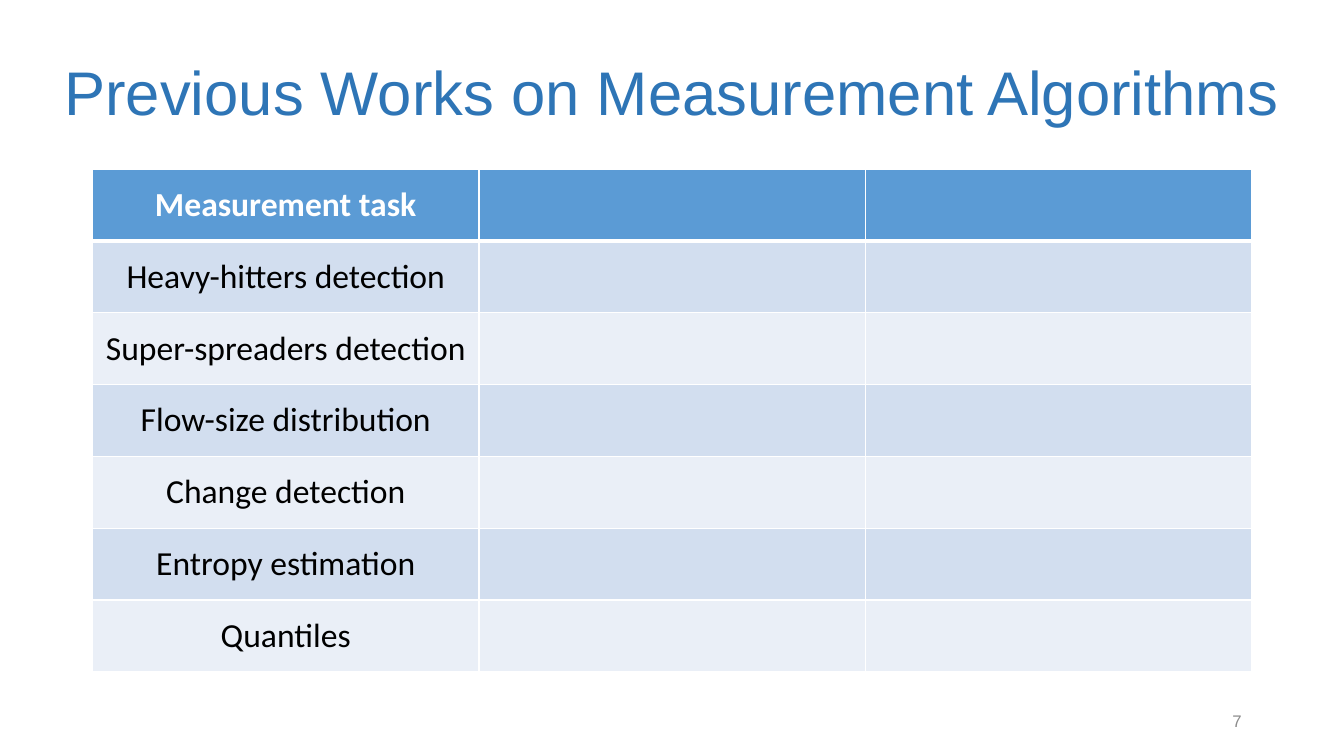
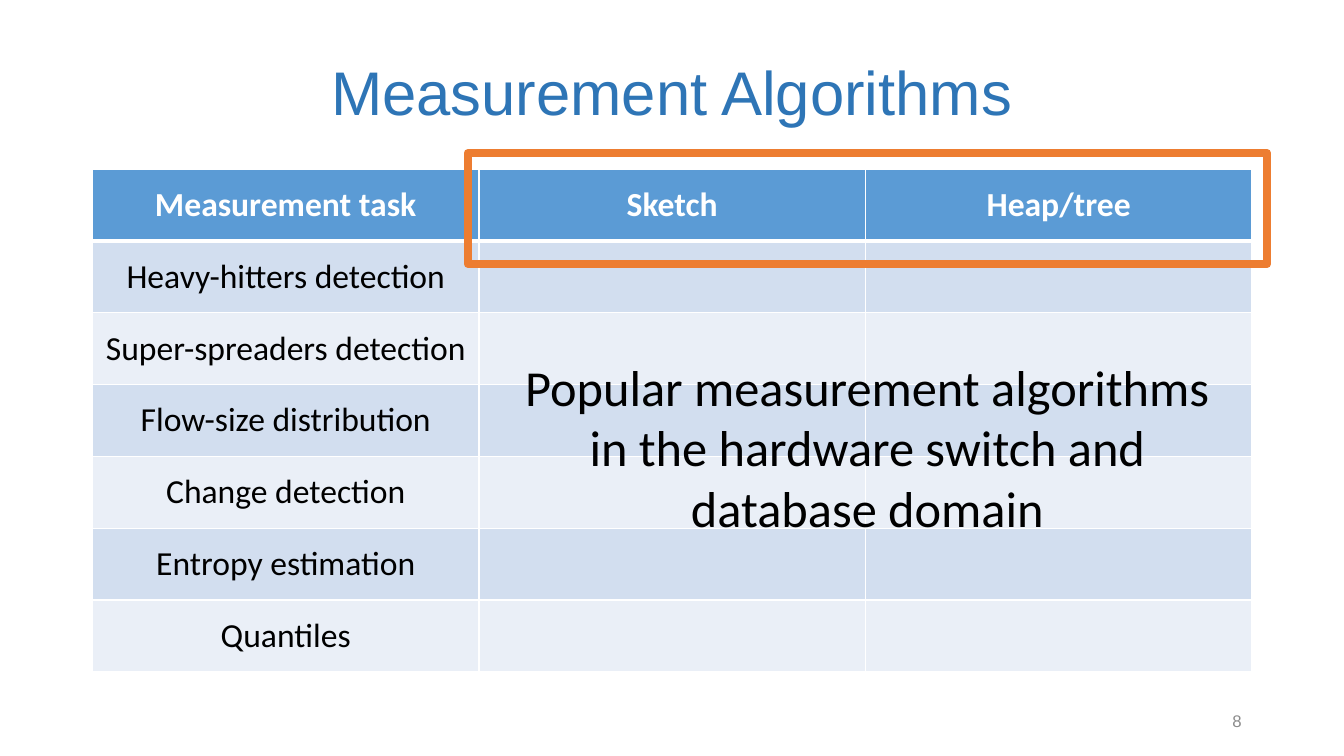
import lxml.etree
import pptx
import pptx.dml.color
import pptx.enum.shapes
import pptx.enum.text
import pptx.oxml.ns
import pptx.util

Cm = pptx.util.Cm
Pt = pptx.util.Pt
RGBColor = pptx.dml.color.RGBColor
Align = pptx.enum.text.PP_ALIGN
Anchor = pptx.enum.text.MSO_ANCHOR
qn = pptx.oxml.ns.qn

# Colours
WHITE = RGBColor(0xFF, 0xFF, 0xFF)
BLACK = RGBColor(0x00, 0x00, 0x00)
NAVY = RGBColor(0x2E, 0x75, 0xB6)
BLUE = RGBColor(0x5B, 0x9B, 0xD5)
BANDS = (RGBColor(0xEA, 0xEF, 0xF7), RGBColor(0xD2, 0xDE, 0xEF))
GREY = RGBColor(0x8C, 0x8C, 0x8C)
ORANGE = RGBColor(0xED, 0x7D, 0x31)

# Page and table grid, in centimetres
WIDE, HIGH = 33.87, 19.05
LEFT, TOP = 2.33, 4.26
COL, ROW = 9.74, 1.81

TASKS = (
    "Heavy-hitters detection",
    "Super-spreaders detection",
    "Flow-size distribution",
    "Change detection",
    "Entropy estimation",
    "Quantiles",
)


def write(frame, text, size=24, font="Calibri", color=BLACK, bold=False,
          align=Align.CENTER, anchor=Anchor.MIDDLE, lead=None):
    """Put one formatted paragraph into a text frame."""
    frame.word_wrap = True
    frame.vertical_anchor = anchor
    para = frame.paragraphs[0]
    para.alignment = align
    if lead:
        para.line_spacing = lead
    run = para.add_run()
    run.text = text
    run.font.size = Pt(size)
    run.font.name = font
    run.font.bold = bold
    run.font.color.rgb = color


def edge(cell, **widths):
    """Draw white cell borders; widths are points by side L, R, T, B."""
    props = cell._tc.get_or_add_tcPr()
    for side, width in widths.items():
        line = lxml.etree.SubElement(props, qn("a:ln" + side), w=str(Pt(width)))
        fill = lxml.etree.SubElement(line, qn("a:solidFill"))
        lxml.etree.SubElement(fill, qn("a:srgbClr"), val=str(WHITE))


class Deck:
    """Holds the shared style and the current slide."""

    def __init__(self):
        self.show = pptx.Presentation()
        self.show.slide_width = Cm(WIDE)
        self.show.slide_height = Cm(HIGH)
        self.slide = None

    def start(self, title, number, left=LEFT):
        """Add a slide with its title and page number."""
        self.slide = self.show.slides.add_slide(self.show.slide_layouts[5])
        head = self.slide.shapes.title
        head.left, head.top = Cm(left), Cm(0.58)
        head.width, head.height = Cm(WIDE - 2 * left), Cm(3.68)
        frame = head.text_frame
        frame.auto_size = pptx.enum.text.MSO_AUTO_SIZE.NONE
        write(frame, title, size=44, font="Arial", color=NAVY, lead=0.9)
        self.text(str(number), 23.92, 17.65, 7.62, 1.02, size=12,
                  font="Arial", color=GREY, align=Align.RIGHT)

    def text(self, text, left, top, width, height, **style):
        box = self.slide.shapes.add_textbox(
            Cm(left), Cm(top), Cm(width), Cm(height))
        write(box.text_frame, text, **style)

    def table(self, heads):
        """Add the task table; rows below the header are banded."""
        rows = [heads] + [(task, "", "") for task in TASKS]
        grid = self.slide.shapes.add_table(
            len(rows), len(heads), Cm(LEFT), Cm(TOP),
            Cm(COL * len(heads)), Cm(ROW * len(rows))).table
        for r, row in enumerate(rows):
            first = r == 0
            for c, text in enumerate(row):
                cell = grid.cell(r, c)
                edge(cell, L=1, R=1, T=3 if r == 1 else 1, B=3 if first else 1)
                cell.fill.solid()
                cell.fill.fore_color.rgb = BLUE if first else BANDS[r % 2]
                cell.vertical_anchor = Anchor.MIDDLE
                if text:
                    write(cell.text_frame, text, bold=first,
                          color=WHITE if first else BLACK)

    def frame(self, left, top, width, height):
        """Add an unfilled box that marks an area."""
        box = self.slide.shapes.add_shape(
            pptx.enum.shapes.MSO_SHAPE.RECTANGLE,
            Cm(left), Cm(top), Cm(width), Cm(height))
        box.shadow.inherit = False
        box.fill.background()
        box.line.color.rgb = ORANGE
        box.line.width = Pt(6)


def main():
    deck = Deck()

    # Tasks only
    deck.start("Previous Works on Measurement Algorithms", 7, left=0)
    deck.table(("Measurement task", "", ""))

    # Tasks with the two kinds of algorithm marked
    deck.start("Measurement Algorithms", 8)
    deck.table(("Measurement task", "Sketch", "Heap/tree"))
    deck.frame(11.79, 3.86, 20.14, 2.79)
    deck.text("Popular measurement algorithms in the hardware switch "
              "and database domain", 12.65, 8.84, 18.42, 4.88,
              size=36, anchor=Anchor.TOP)

    deck.show.save("out.pptx")


if __name__ == "__main__":
    main()
